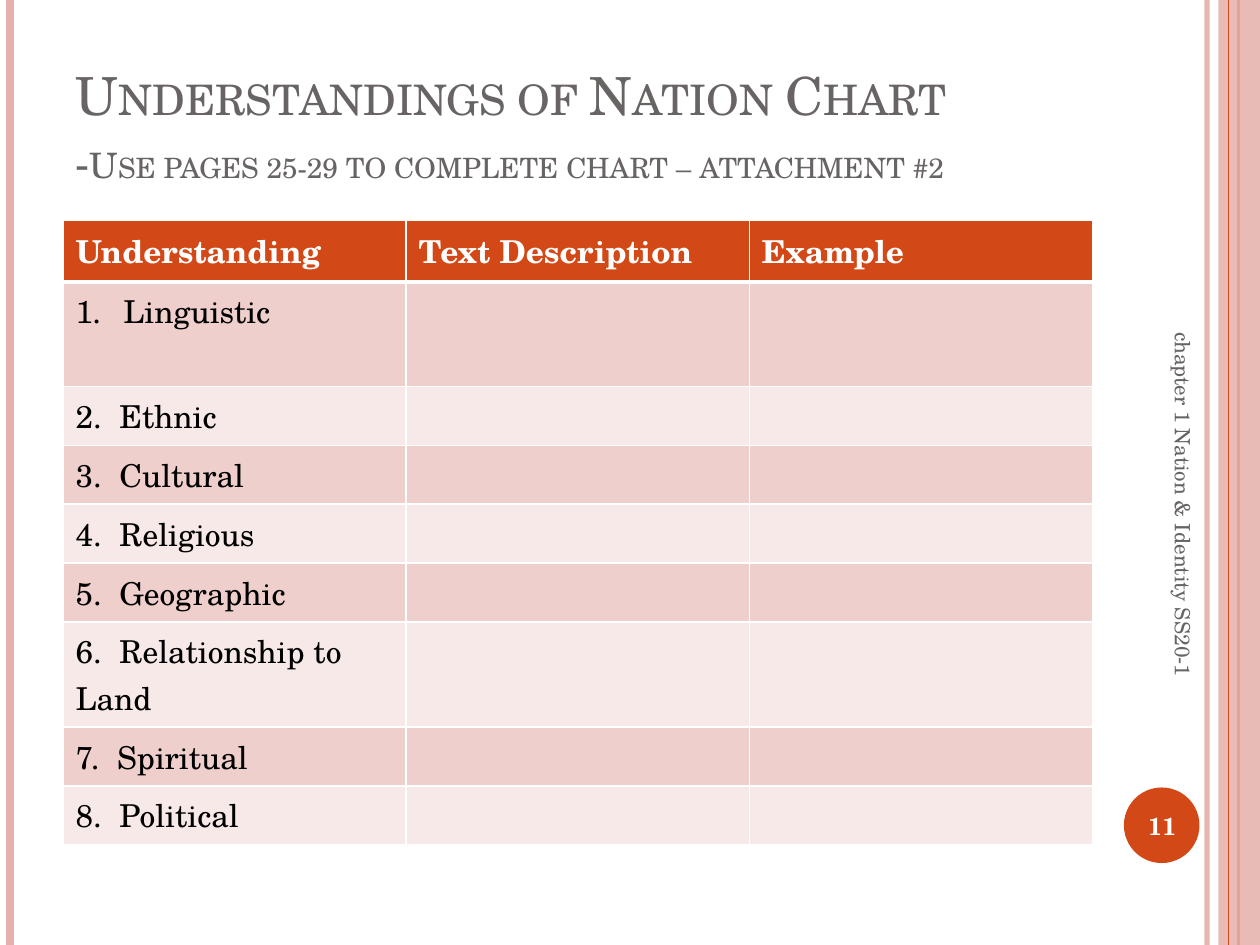
"""Build the Understandings of Nation chart slide."""
import pptx
import pptx.dml.color
import pptx.enum.shapes
import pptx.enum.text
import pptx.oxml
import pptx.oxml.ns
import pptx.util
from pptx.util import Inches

FONT = "TeX Gyre Schola"
COLORS = {
    "accent": "D34817",
    "rose": "E6B1AC",
    "gray": "696464",
    "white": "FFFFFF",
    "black": "000000",
    "band_dark": "EFCFCC",
    "band_light": "F7E9E8",
}
HEADINGS = ["Understanding", "Text Description", "Example"]
UNDERSTANDINGS = [
    "Linguistic", "2.  Ethnic", "3.  Cultural", "4.  Religious",
    "5.  Geographic", "6.  Relationship to Land", "7.  Spiritual",
    "8.  Political",
]


def rgb(name):
    """Return the named colour."""
    return pptx.dml.color.RGBColor.from_string(COLORS[name])


def add_element(parent, tag, **attributes):
    """Append a DrawingML element with attributes."""
    element = pptx.oxml.parse_xml(f"<a:{tag} {pptx.oxml.ns.nsdecls('a')}/>")
    for key, value in attributes.items():
        element.set(key, str(value))
    parent.append(element)
    return element


def set_opacity(owner, percent):
    """Set the opacity of the solid fill inside an element."""
    color = next(owner.iter(pptx.oxml.ns.qn("a:srgbClr")))
    add_element(color, "alpha", val=percent * 1000)


def add_run(paragraph, text, size, color, bold=False):
    """Add one formatted run and return it."""
    run = paragraph.add_run()
    run.text = text
    run.font.name = FONT
    run.font.size = pptx.util.Pt(size)
    run.font.bold = bold
    run.font.color.rgb = rgb(color)
    return run


def add_stripe(slide, x, width, color, opacity=100):
    """Draw a full-height vertical line."""
    stripe = slide.shapes.add_connector(
        pptx.enum.shapes.MSO_CONNECTOR.STRAIGHT,
        Inches(x), 0, Inches(x), Inches(7.5))
    stripe.line.width = pptx.util.Pt(width)
    stripe.line.color.rgb = rgb(color)
    properties = stripe._element.spPr
    if opacity < 100:
        set_opacity(properties, opacity)
    add_element(properties, "effectLst")


def add_block(slide, kind, box, color):
    """Draw a filled shape without outline."""
    block = slide.shapes.add_shape(kind, *map(Inches, box))
    block.shadow.inherit = False
    block.fill.solid()
    block.fill.fore_color.rgb = rgb(color)
    block.line.fill.background()
    return block


def add_label(slide, box, text, size, color, bold=False, align=None, rotation=0):
    """Add a vertically centred one-line label."""
    label = slide.shapes.add_textbox(*map(Inches, box))
    label.rotation = rotation
    frame = label.text_frame
    frame.word_wrap = True
    frame.vertical_anchor = pptx.enum.text.MSO_ANCHOR.MIDDLE
    frame.paragraphs[0].alignment = align
    add_run(frame.paragraphs[0], text, size, color, bold)


def fill_title(slide):
    """Place and write the slide title in small capitals."""
    title = slide.shapes.title
    title.left, title.top, title.width, title.height = map(
        Inches, (0.5, 0.3, 8.17, 1.25))
    frame = title.text_frame
    frame.word_wrap = True
    frame.auto_size = pptx.enum.text.MSO_AUTO_SIZE.NONE
    frame.vertical_anchor = pptx.enum.text.MSO_ANCHOR.BOTTOM
    heading = frame.paragraphs[0]
    heading.alignment = pptx.enum.text.PP_ALIGN.LEFT
    runs = [add_run(heading, "Understandings of Nation Chart", 30, "gray")]
    heading.add_line_break()
    runs.append(add_run(heading, "-", 30, "gray"))
    runs.append(add_run(
        heading, "Use pages 25-29 to complete chart – attachment #2", 20, "gray"))
    for run in runs:
        run.font._element.set("cap", "small")


def format_cell(cell, fill, bottom_width=1, top_width=1):
    """Give a cell white borders and a solid fill."""
    properties = cell._tc.get_or_add_tcPr()
    widths = {"lnL": 1, "lnR": 1, "lnT": top_width, "lnB": bottom_width}
    for side, width in widths.items():
        border = add_element(properties, side, w=pptx.util.Pt(width))
        solid = add_element(border, "solidFill")
        add_element(solid, "srgbClr", val=COLORS["white"])
    cell.fill.solid()
    cell.fill.fore_color.rgb = rgb(fill)


def number_paragraph(paragraph):
    """Turn a paragraph into a numbered item with a hanging indent."""
    properties = paragraph._p.get_or_add_pPr()
    properties.set("marL", str(Inches(0.38)))
    properties.set("indent", str(Inches(-0.38)))
    add_element(properties, "buFont", typeface="+mj-lt")
    add_element(properties, "buAutoNum", type="arabicPeriod")


def add_nation_table(slide):
    """Add the table of understandings."""
    row_heights = [0.41, 0.83] + [0.41] * 7
    table = slide.shapes.add_table(
        len(row_heights), len(HEADINGS), Inches(0.5), Inches(1.75),
        Inches(8.17), Inches(sum(row_heights))).table
    for row, height in zip(table.rows, row_heights):
        row.height = Inches(height)
    for column, heading in enumerate(HEADINGS):
        cell = table.cell(0, column)
        format_cell(cell, "accent", bottom_width=3)
        add_run(cell.text_frame.paragraphs[0], heading, 18, "white", True)
    for index, understanding in enumerate(UNDERSTANDINGS, 1):
        band = "band_dark" if index % 2 else "band_light"
        for column in range(len(HEADINGS)):
            format_cell(table.cell(index, column), band,
                        top_width=3 if index == 1 else 1)
        item = table.cell(index, 0).text_frame.paragraphs[0]
        add_run(item, understanding, 18, "black")
    number_paragraph(table.cell(1, 0).text_frame.paragraphs[0])


def main():
    """Build and save the slide."""
    deck = pptx.Presentation()
    deck.slide_width, deck.slide_height = Inches(10), Inches(7.5)
    slide = deck.slides.add_slide(deck.slide_layouts[5])
    shapes = pptx.enum.shapes.MSO_SHAPE

    add_stripe(slide, 9.58, 3, "rose", 93)
    add_stripe(slide, 0.08, 4.5, "rose")
    add_stripe(slide, 9.83, 1.5, "accent")
    side_band = add_block(slide, shapes.RECTANGLE, (9.67, 0, 0.33, 7.5), "rose")
    set_opacity(side_band._element.spPr, 87)
    add_stripe(slide, 9.75, 0.75, "accent")
    add_block(slide, shapes.OVAL, (8.92, 6.25, 0.6, 0.6), "accent")

    fill_title(slide)
    add_nation_table(slide)
    add_label(slide, (7.64, 4.09, 3.5, 0.4), "chapter 1 Nation & Identity SS20-1",
              12, "gray", rotation=90)
    add_label(slide, (8.89, 6.27, 0.67, 0.57), "11", 14, "white", bold=True,
              align=pptx.enum.text.PP_ALIGN.CENTER)
    deck.save("out.pptx")


if __name__ == "__main__":
    main()
